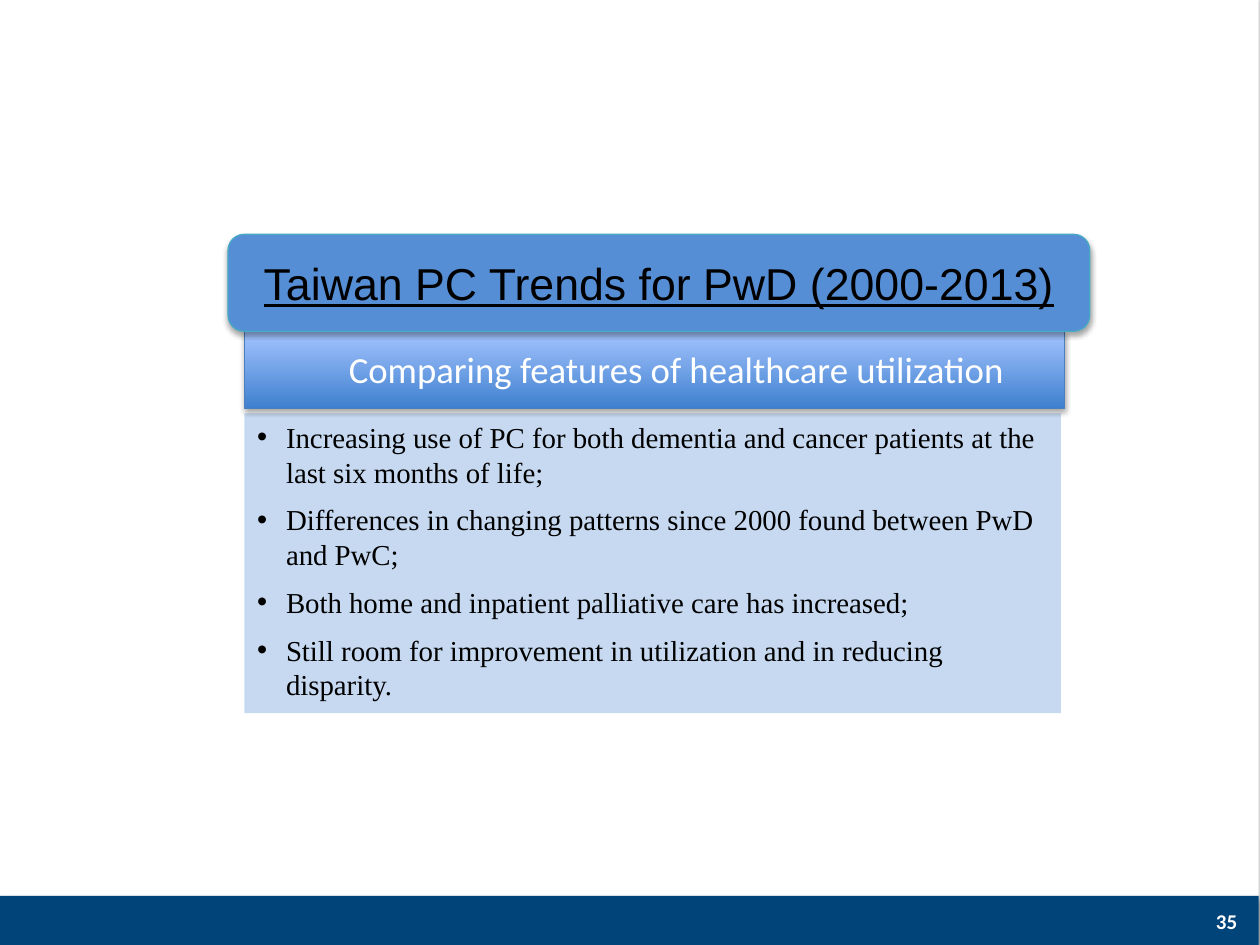
from pptx import Presentation
from pptx.dml.color import RGBColor
from pptx.enum.shapes import MSO_SHAPE
from pptx.enum.text import MSO_ANCHOR, MSO_AUTO_SIZE, PP_ALIGN
from pptx.util import Inches, Pt

RECTANGLE = MSO_SHAPE.RECTANGLE
PROCESS = MSO_SHAPE.FLOWCHART_PROCESS
ROUNDED = MSO_SHAPE.ROUNDED_RECTANGLE
TOP, MIDDLE = MSO_ANCHOR.TOP, MSO_ANCHOR.MIDDLE
LEFT, CENTER = PP_ALIGN.LEFT, PP_ALIGN.CENTER
NO_FIT = MSO_AUTO_SIZE.NONE

WIDTH, HEIGHT = 10, 7.5
FOOTER_HEIGHT = 0.39
INDENT = 0.23

TITLE = "Taiwan PC Trends for PwD (2000-2013)"
SUBTITLE = "Comparing features of healthcare utilization"
FINDINGS = [
    "Increasing use of PC for both dementia and cancer patients at the last six months of life;",
    "Differences in changing patterns since 2000 found between PwD and PwC;",
    "Both home and inpatient palliative care has increased;",
    "Still room for improvement in utilization and in reducing disparity.",
]


def color(value):
    return RGBColor.from_string(value)


def place(shape, box):
    shape.left, shape.top, shape.width, shape.height = map(Inches, box)


def bring_to_front(page, shape):
    page.shapes._spTree.append(shape._element)


def add_panel(page, kind, box, fill=None, line=None):
    """Add a shape that keeps the soft shadow of the theme."""
    panel = page.shapes.add_shape(kind, *map(Inches, box))
    if fill:
        panel.fill.solid()
        panel.fill.fore_color.rgb = color(fill)
    if line:
        panel.line.color.rgb = color(line)
        panel.line.width = Pt(0.75)
    else:
        panel.line.fill.background()
    return panel


def style_paragraph(para, font, size, text_color, align=LEFT):
    para.alignment = align
    para.font.name = font
    para.font.size = Pt(size)
    para.font.color.rgb = color(text_color)


def fill_text(shape, text, anchor, wrap=True):
    frame = shape.text_frame
    frame.text = text
    frame.auto_size = NO_FIT
    frame.word_wrap = wrap
    frame.vertical_anchor = anchor
    return frame.paragraphs


def draw_background(page, box):
    left, top, width, height = box
    add_panel(page, RECTANGLE, box, "FFFFFF")
    footer_top = top + height - FOOTER_HEIGHT
    footer = (left, footer_top, width, FOOTER_HEIGHT)
    add_panel(page, RECTANGLE, footer, "004479")


def draw_findings(page, box):
    body = page.placeholders[1]
    place(body, box)
    bring_to_front(page, body)
    body.fill.solid()
    body.fill.fore_color.rgb = color("C6D9F1")
    for index, para in enumerate(fill_text(body, "\n".join(FINDINGS), TOP)):
        style_paragraph(para, "Times New Roman", 16.5, "000000")
        para.space_before = Pt(7.5 if index else 0)
        properties = para._p.get_or_add_pPr()
        properties.set("marL", str(Inches(INDENT)))
        properties.set("indent", str(-Inches(INDENT)))


def draw_subtitle_band(page, box):
    band = add_panel(page, PROCESS, box, line="4B7EBC")
    band.fill.gradient()
    band.fill.gradient_angle = 90
    for stop, shade in zip(band.fill.gradient_stops, ("3F80CE", "A4C4FF")):
        stop.color.rgb = color(shade)


def draw_title(page, box):
    left, top, width, height = box
    add_panel(page, ROUNDED, box, "558ED5", "46AAC5")
    title = page.shapes.title
    margin = 0.12
    place(title, (left, top + margin, width, height - 2 * margin))
    bring_to_front(page, title)
    para = fill_text(title, TITLE, MIDDLE)[0]
    style_paragraph(para, "Arial", 25.5, "000000", CENTER)
    para.font.underline = True


def draw_subtitle(page, box):
    label = page.shapes.add_textbox(*map(Inches, box))
    para = fill_text(label, SUBTITLE, TOP, wrap=False)[0]
    style_paragraph(para, "Calibri", 21, "FFFFFF")


def draw_page_number(page, box):
    number = page.shapes.add_textbox(*map(Inches, box))
    para = fill_text(number, "35", MIDDLE)[0]
    style_paragraph(para, "Calibri", 12, "FFFFFF", CENTER)
    para.font.bold = True


def main():
    deck = Presentation()
    deck.slide_width, deck.slide_height = Inches(WIDTH), Inches(HEIGHT)
    page = deck.slides.add_slide(deck.slide_layouts[1])

    # Page surface and footer bar
    draw_background(page, (-0.01, -0.03, WIDTH, HEIGHT + 0.03))
    # Card: findings, subtitle band and title, from back to front
    draw_findings(page, (1.94, 3.28, 6.48, 2.38))
    draw_subtitle_band(page, (1.94, 2.63, 6.51, 0.61))
    draw_title(page, (1.81, 1.86, 6.84, 0.77))
    draw_subtitle(page, (2.67, 2.7, 5.46, 0.45))
    # Footer number
    draw_page_number(page, (9.48, HEIGHT - FOOTER_HEIGHT, 0.51, 0.4))

    deck.save("out.pptx")


if __name__ == "__main__":
    main()
